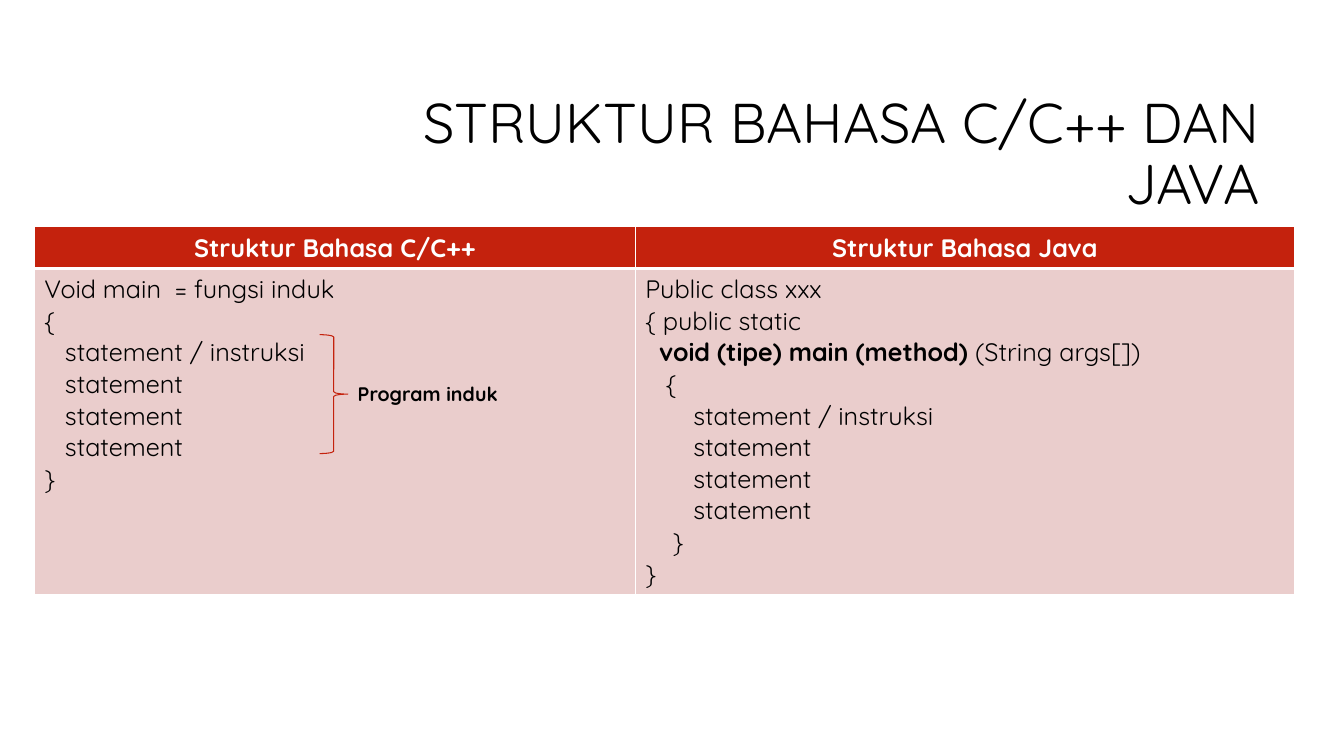
from dataclasses import dataclass

import lxml.etree
import pptx
import pptx.dml.color
import pptx.enum.shapes
import pptx.enum.text
import pptx.oxml.ns
import pptx.util

Inches = pptx.util.Inches
RGBColor = pptx.dml.color.RGBColor
Align = pptx.enum.text.PP_ALIGN
Anchor = pptx.enum.text.MSO_ANCHOR

FONT = "Quicksand"
BLACK = RGBColor(0x00, 0x00, 0x00)
WHITE = RGBColor(0xFF, 0xFF, 0xFF)
RED = RGBColor(0xC4, 0x22, 0x0D)
PINK = RGBColor(0xEA, 0xCD, 0xCC)


@dataclass(frozen=True)
class TextStyle:
    size: float
    color: RGBColor = BLACK
    bold: bool = False
    align: Align = Align.LEFT


@dataclass(frozen=True)
class Label:
    text: str
    left: float
    top: float
    width: float
    height: float
    style: TextStyle
    anchor: Anchor = Anchor.TOP
    line_spacing: float = 1.0


@dataclass(frozen=True)
class LanguageColumn:
    heading: str
    width: float
    code: str
    bold_part: str = ""


HEADING_STYLE = TextStyle(18, WHITE, True, Align.CENTER)
CODE_STYLE = TextStyle(18)
ROW_HEIGHTS = (0.39, 3.23)

LABELS = (
    Label("STRUKTUR BAHASA C/C++ DAN JAVA", 3.17, 0.84, 9.42, 1.41,
          TextStyle(40, align=Align.RIGHT), Anchor.MIDDLE, 0.9),
    Label("Program induk", 3.45, 3.74, 1.66, 0.34, TextStyle(14, bold=True)),
)

LANGUAGES = (
    LanguageColumn("Struktur Bahasa C/C++", 5.96, """Void main  = fungsi induk
{
   statement / instruksi
   statement
   statement
   statement
}"""),
    LanguageColumn("Struktur Bahasa Java", 6.54, """Public class xxx
{ public static
  void (tipe) main (method) (String args[])
   {
       statement / instruksi
       statement
       statement
       statement
    }
}""", "void (tipe) main (method) "),
)


def format_font(font: pptx.text.text.Font, style: TextStyle, bold: bool) -> None:
    font.name = FONT
    font.size = pptx.util.Pt(style.size)
    font.bold = bold
    font.color.rgb = style.color


def write_text(frame: pptx.text.text.TextFrame, text: str, style: TextStyle,
               bold_part: str = "") -> None:
    frame.text = text
    for paragraph in frame.paragraphs:
        paragraph.alignment = style.align
        if bold_part and bold_part in paragraph.text:
            pieces = paragraph.text.partition(bold_part)
            paragraph.text = pieces[0]
            for piece in pieces[1:]:
                paragraph.add_run().text = piece
        for run in paragraph.runs:
            format_font(run.font, style, style.bold or run.text == bold_part)


def add_label(slide: pptx.slide.Slide, label: Label) -> None:
    box = slide.shapes.add_textbox(Inches(label.left), Inches(label.top),
                                   Inches(label.width), Inches(label.height))
    frame = box.text_frame
    frame.word_wrap = True
    frame.vertical_anchor = label.anchor
    write_text(frame, label.text, label.style)
    frame.paragraphs[0].line_spacing = label.line_spacing


def set_borders(cell: pptx.table._Cell, widths: dict[str, float]) -> None:
    qualify = pptx.oxml.ns.qn
    properties = cell._tc.get_or_add_tcPr()
    for side, width in widths.items():
        line = lxml.etree.SubElement(properties, qualify(f"a:ln{side}"),
                                     w=str(pptx.util.Pt(width)))
        fill = lxml.etree.SubElement(line, qualify("a:solidFill"))
        lxml.etree.SubElement(fill, qualify("a:srgbClr"), val=str(WHITE))


def fill_cell(cell: pptx.table._Cell, color: RGBColor, borders: dict[str, float]) -> None:
    set_borders(cell, borders)
    cell.fill.solid()
    cell.fill.fore_color.rgb = color


def add_language_table(slide: pptx.slide.Slide) -> None:
    table = slide.shapes.add_table(
        len(ROW_HEIGHTS), len(LANGUAGES), Inches(0.34), Inches(2.25),
        Inches(sum(language.width for language in LANGUAGES)),
        Inches(sum(ROW_HEIGHTS))).table
    for row, height in zip(table.rows, ROW_HEIGHTS):
        row.height = Inches(height)
    for index, language in enumerate(LANGUAGES):
        table.columns[index].width = Inches(language.width)
        heading, body = table.cell(0, index), table.cell(1, index)
        fill_cell(heading, RED, {"L": 1, "R": 1, "T": 1, "B": 3})
        fill_cell(body, PINK, {"L": 1, "R": 1, "T": 3, "B": 1})
        write_text(heading.text_frame, language.heading, HEADING_STYLE)
        write_text(body.text_frame, language.code, CODE_STYLE, language.bold_part)


def add_brace(slide: pptx.slide.Slide) -> None:
    brace = slide.shapes.add_shape(pptx.enum.shapes.MSO_SHAPE.RIGHT_BRACE,
                                   Inches(3.17), Inches(3.32), Inches(0.28), Inches(1.18))
    brace.shadow.inherit = False
    brace.fill.background()
    brace.line.color.rgb = RED
    brace.line.width = pptx.util.Pt(0.75)


def main() -> None:
    presentation = pptx.Presentation()
    presentation.slide_width = Inches(13.33)
    presentation.slide_height = Inches(7.5)
    slide = presentation.slides.add_slide(presentation.slide_layouts[6])
    add_language_table(slide)
    add_brace(slide)
    for label in LABELS:
        add_label(slide, label)
    presentation.save("out.pptx")


if __name__ == "__main__":
    main()
